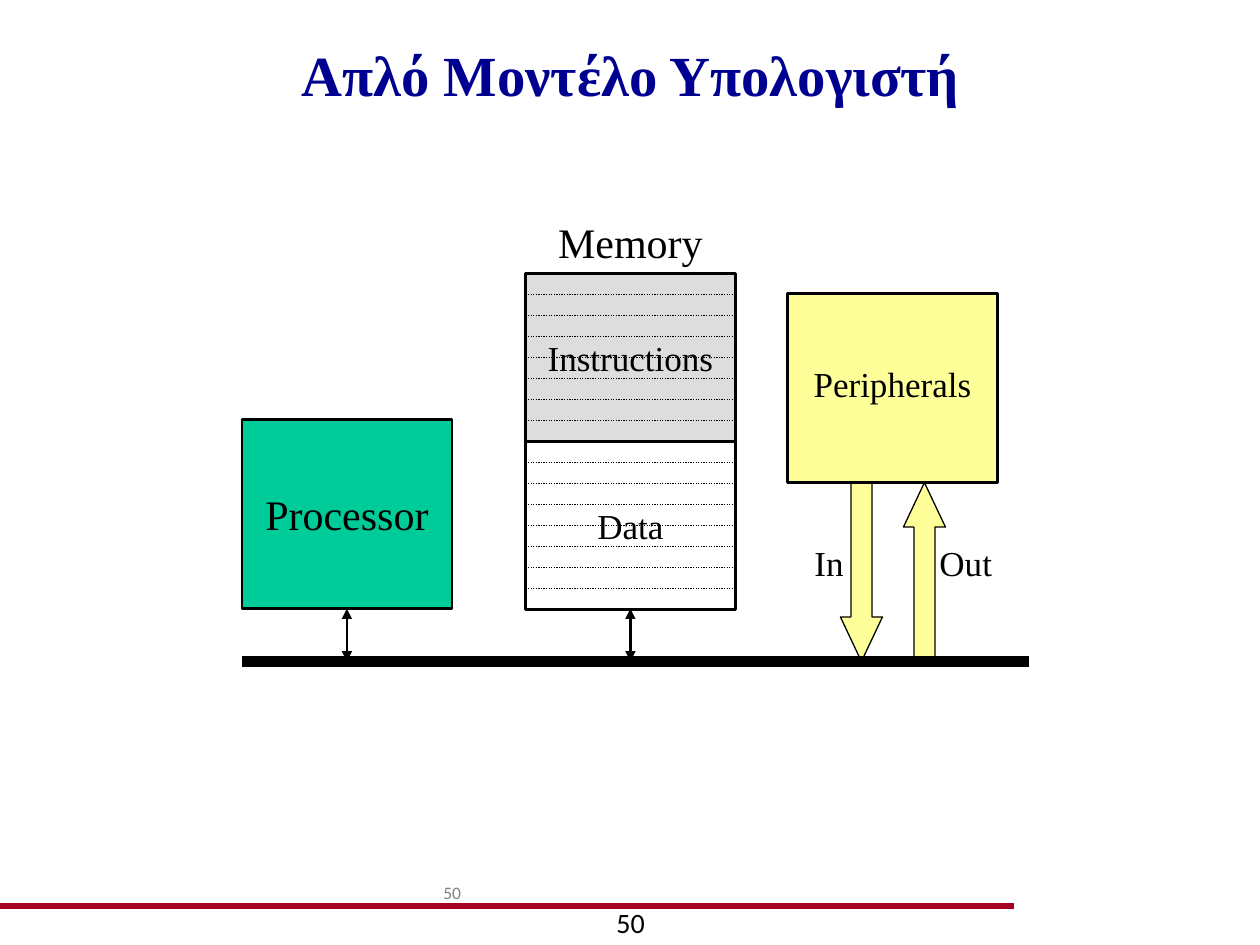
"""Build a slide showing a simple computer model: processor, memory, peripherals and bus."""
from lxml.etree import SubElement
from pptx import Presentation
from pptx.dml.color import RGBColor
from pptx.enum.dml import MSO_LINE
from pptx.enum.shapes import MSO_CONNECTOR, MSO_SHAPE as Shape
from pptx.enum.text import MSO_ANCHOR, PP_ALIGN as Align
from pptx.oxml.ns import qn
from pptx.util import Inches, Pt

THEME = {
    "serif": "Times New Roman", "sans": "Calibri",
    "title": "000090", "ink": "000000", "muted": "808080", "rule": "A50021",
    "processor": "00CC99", "instructions": "DDDDDD", "data": "FFFFFF", "peripherals": "FFFF99",
    "title_size": 32.4, "large": 24, "medium": 20, "page_size": 16, "small": 10,
    "thin": 0.75, "outline": 1.5, "rule_width": 3, "bus_width": 6,
}
TITLE = "Απλό Μοντέλο Υπολογιστή"
UNIT_WIDTH = 5 / 3
BUS_LEFT, BUS_RIGHT, BUS_TOP = 1.92, 8.17, 5.25
UNIT_BOTTOM = 4.83
MEMORY_LEFT, MEMORY_TOP, MEMORY_ROWS, ROW_HEIGHT = 4.17, 2.17, 8, 1 / 6
MEMORY_PARTS = [("Data", "data", 1), ("Instructions", "instructions", 0)]
PERIPHERAL_LEFT, PERIPHERAL_TOP, UNIT_HEIGHT = 6.25, 2.33, 1.5
FLOWS = [(Shape.UP_ARROW, 7.17), (Shape.DOWN_ARROW, 6.67)]
LABELS = [
    ("In", 6.33, 4.25, 0.5, "medium"),
    ("Out", 7.33, 4.25, 0.67, "medium"),
    ("Memory", MEMORY_LEFT, 1.67, UNIT_WIDTH, "large"),
]
PAGE_NUMBERS = [
    ("50", 6.95, "small", "muted", Align.LEFT),
    ("50", 7.14, "page_size", "ink", Align.CENTER),
]


def color(name):
    return RGBColor.from_string(THEME[name])


def style_text(paragraph, size, ink="ink", face="serif", align=Align.CENTER):
    paragraph.alignment = align
    font = paragraph.font
    font.name, font.size = THEME[face], Pt(THEME[size])
    font.color.rgb = color(ink)


def add_text(page, text, left, top, width, size, height=0.43, **style):
    box = page.shapes.add_textbox(Inches(left), Inches(top), Inches(width), Inches(height))
    box.text_frame.word_wrap = True
    paragraph = box.text_frame.paragraphs[0]
    paragraph.text = text
    style_text(paragraph, size, **style)


def add_block(page, kind, left, top, width, height, fill, weight="outline"):
    block = page.shapes.add_shape(kind, Inches(left), Inches(top), Inches(width), Inches(height))
    block.shadow.inherit = False
    block.fill.solid()
    block.fill.fore_color.rgb = color(fill)
    block.line.color.rgb = color("ink")
    block.line.width = Pt(THEME[weight])
    return block


def add_line(page, start, end, weight, ink="ink", dotted=False, arrows=False):
    line = page.shapes.add_connector(MSO_CONNECTOR.STRAIGHT, *map(Inches, start + end))
    line.line.color.rgb = color(ink)
    line.line.width = Pt(THEME[weight])
    if dotted:
        line.line.dash_style = MSO_LINE.ROUND_DOT
    if arrows:
        outline = line.line._get_or_add_ln()
        for tag in ("a:headEnd", "a:tailEnd"):
            SubElement(outline, qn(tag), type="triangle")
    SubElement(line._element.spPr, qn("a:effectLst"))


def add_title(page):
    title = page.shapes.title
    title.left, title.top, title.width, title.height = map(Inches, (0.38, 0.25, 9.25, 0.67))
    title.text_frame.text = TITLE
    title.text_frame.vertical_anchor = MSO_ANCHOR.MIDDLE
    style_text(title.text_frame.paragraphs[0], "title_size", "title")
    title.text_frame.paragraphs[0].font.bold = True


def add_unit(page, name, left, top, size):
    add_block(page, Shape.RECTANGLE, left, top, UNIT_WIDTH, UNIT_HEIGHT, name.lower())
    add_text(page, name, left, top + 0.5, UNIT_WIDTH, size)


def add_bus_link(page, left):
    center = left + UNIT_WIDTH / 2
    add_line(page, (center, UNIT_BOTTOM), (center, BUS_TOP), "outline", arrows=True)


def add_memory(page):
    height = MEMORY_ROWS * ROW_HEIGHT
    for name, fill, position in MEMORY_PARTS:
        top = MEMORY_TOP + position * height
        add_block(page, Shape.RECTANGLE, MEMORY_LEFT, top, UNIT_WIDTH, height, fill)
        for row in range(1, MEMORY_ROWS):
            y = top + row * ROW_HEIGHT
            add_line(page, (MEMORY_LEFT, y), (MEMORY_LEFT + UNIT_WIDTH, y), "thin", dotted=True)
        add_text(page, name, MEMORY_LEFT, top + 0.45, UNIT_WIDTH, "medium")


def add_peripherals(page):
    top = PERIPHERAL_TOP + UNIT_HEIGHT
    for kind, left in FLOWS:
        arrow = add_block(page, kind, left, top, 1 / 3, BUS_TOP - top, "peripherals", "thin")
        arrow.adjustments[0], arrow.adjustments[1] = 0.5, 1.06
    add_unit(page, "Peripherals", PERIPHERAL_LEFT, PERIPHERAL_TOP, "medium")


def main():
    deck = Presentation()
    deck.slide_width, deck.slide_height = Inches(10), Inches(7.5)
    page = deck.slides.add_slide(deck.slide_layouts[5])
    add_line(page, (0, 7.19), (8.05, 7.19), "rule_width", "rule")
    add_title(page)
    for left in (BUS_LEFT, MEMORY_LEFT):
        add_bus_link(page, left)
    add_unit(page, "Processor", BUS_LEFT, UNIT_BOTTOM - UNIT_HEIGHT, "large")
    add_memory(page)
    add_peripherals(page)
    add_line(page, (BUS_LEFT, BUS_TOP), (BUS_RIGHT, BUS_TOP), "bus_width")
    for label in LABELS:
        add_text(page, *label)
    for text, top, size, ink, align in PAGE_NUMBERS:
        add_text(page, text, 3.42, top, 3.17, size, 0.4, ink=ink, face="sans", align=align)
    deck.save("out.pptx")


if __name__ == "__main__":
    main()
